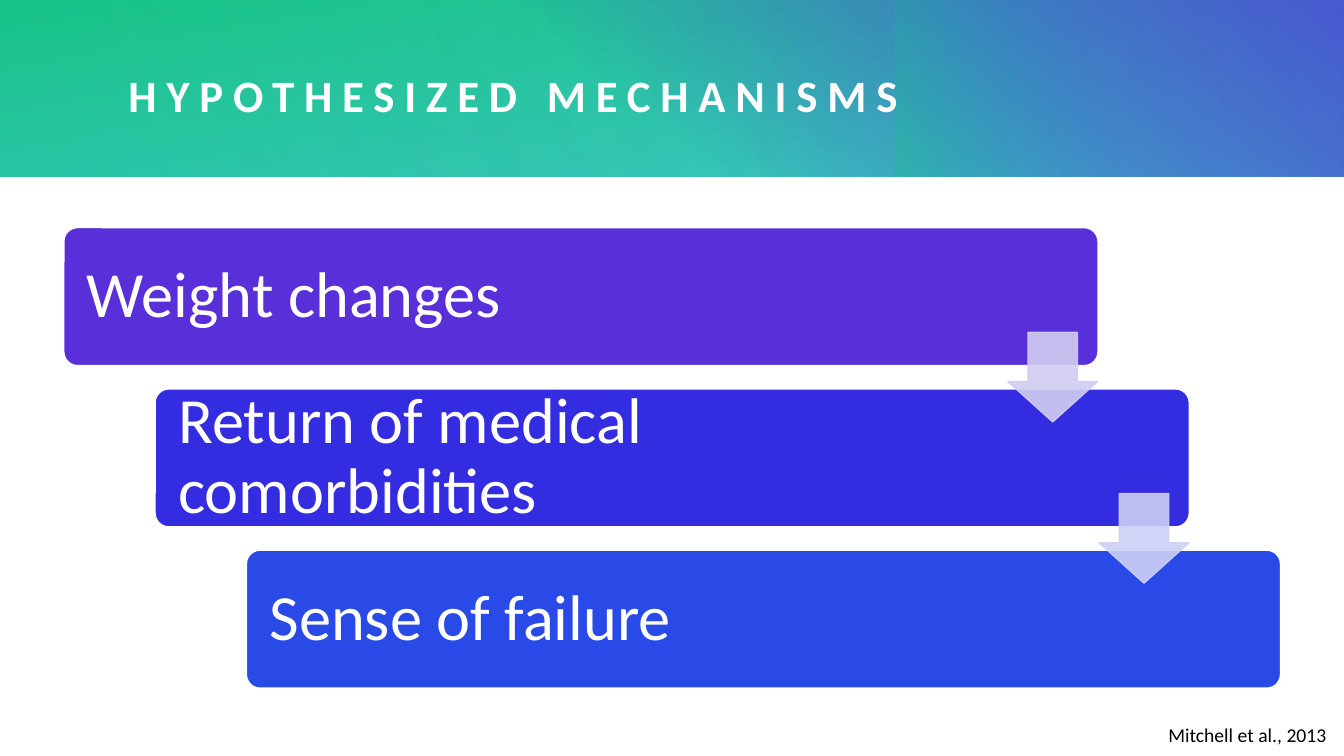
"""Build the hypothesized mechanisms slide."""
from dataclasses import dataclass

from lxml.etree import SubElement
from pptx import Presentation
from pptx.dml.color import RGBColor
from pptx.enum.shapes import MSO_SHAPE
from pptx.enum.text import MSO_ANCHOR, MSO_AUTO_SIZE, PP_ALIGN
from pptx.oxml.ns import qn
from pptx.util import Pt


@dataclass(frozen=True)
class Theme:
    font: str = "Calibri"
    white: str = "FFFFFF"
    black: str = "000000"
    teal: str = "22BFBE"
    green: str = "16C67B"
    blue: str = "1787D5"
    purple: str = "592FD9"
    indigo: str = "332CE0"
    royal: str = "294AE7"
    lilac: str = "D1CDF1"
    lavender: str = "CDD0F6"
    title_size: float = 32
    step_size: float = 46
    source_size: float = 14


def set_opacity(color_parent, percent):
    if percent < 100:
        color = next(color_parent.iter(qn("a:srgbClr")))
        SubElement(color, qn("a:alpha"), val=str(percent * 1000))


def write_text(text_frame, text, *, font, size, color, bold=False, tracking=0,
               line_spacing=1.0, margins=(0, 0, 0, 0), wrap=True):
    text_frame.auto_size = MSO_AUTO_SIZE.NONE
    text_frame.word_wrap = wrap
    text_frame.vertical_anchor = MSO_ANCHOR.MIDDLE
    (text_frame.margin_left, text_frame.margin_top,
     text_frame.margin_right, text_frame.margin_bottom) = map(Pt, margins)
    paragraph = text_frame.paragraphs[0]
    paragraph.alignment = PP_ALIGN.LEFT
    paragraph.line_spacing = line_spacing
    run = paragraph.add_run()
    run.text = text
    run.font.name = font
    run.font.size = Pt(size)
    run.font.bold = bold
    run.font.color.rgb = RGBColor.from_string(color)
    if tracking:
        run.font._element.set("spc", str(tracking * 100))


class SlideBuilder:
    """Hold the theme and the slide being filled."""

    def __init__(self, slide, theme):
        self.slide = slide
        self.theme = theme

    def add_shape(self, kind, box, adjustments=()):
        shape = self.slide.shapes.add_shape(kind, *map(Pt, box))
        shape.shadow.inherit = False
        for index, value in enumerate(adjustments):
            shape.adjustments[index] = value
        return shape

    def add_gradient(self, box, stops, angle, rotation=0):
        shape = self.add_shape(MSO_SHAPE.RECTANGLE, box)
        shape.rotation = rotation
        shape.line.fill.background()
        shape.fill.gradient()
        shape.fill.gradient_angle = 360 - angle
        for stop, (position, color, opacity) in zip(shape.fill.gradient_stops, stops):
            stop.position = position / 100
            stop.color.rgb = RGBColor.from_string(color)
            set_opacity(stop._gs, opacity)

    def add_solid(self, kind, box, adjustments, fill, line, opacity=100):
        shape = self.add_shape(kind, box, adjustments)
        shape.fill.solid()
        shape.fill.fore_color.rgb = RGBColor.from_string(fill)
        shape.line.color.rgb = RGBColor.from_string(line)
        shape.line.width = Pt(1)
        properties = shape._element.spPr
        set_opacity(properties.find(qn("a:solidFill")), opacity)
        set_opacity(properties.find(qn("a:ln")), opacity)
        return shape

    def add_title(self, text, box):
        title = self.slide.shapes.title
        title.left, title.top, title.width, title.height = map(Pt, box)
        title._element.getparent().append(title._element)
        write_text(title.text_frame, text, font=self.theme.font, size=self.theme.title_size,
                   color=self.theme.white, bold=True, tracking=7)

    def add_step(self, text, box, fill):
        step = self.add_solid(MSO_SHAPE.ROUNDED_RECTANGLE, box, [0.1], fill, self.theme.white)
        write_text(step.text_frame, text, font=self.theme.font, size=self.theme.step_size,
                   color=self.theme.white, line_spacing=0.9, margins=(13.7, 0, 143, 0))

    def add_arrow(self, box, color):
        self.add_solid(MSO_SHAPE.DOWN_ARROW, box, [0.55, 0.45], color, color, opacity=90)

    def add_source(self, text, box):
        source = self.slide.shapes.add_textbox(*map(Pt, box))
        write_text(source.text_frame, text, font=self.theme.font, size=self.theme.source_size,
                   color=self.theme.black, wrap=False)


def main():
    theme = Theme()
    presentation = Presentation()
    presentation.slide_width, presentation.slide_height = Pt(960), Pt(540)
    slide = presentation.slides.add_slide(presentation.slide_layouts[5])
    builder = SlideBuilder(slide, theme)

    banner_layers = [
        ((0, 0, 960, 126), [(0, theme.teal, 83), (100, theme.green, 100)], 260, 0),
        ((346.5, 0.5, 613.5, 125.5), [(22, theme.purple, 0), (99, theme.purple, 100)], 310, 0),
        ((710.8, -71.5, 126, 269.2), [(45, theme.blue, 0), (99, theme.green, 33)], 250, 270),
        ((193.3, 0, 766.4, 126), [(0, theme.teal, 30), (99, theme.teal, 0)], 330, 180),
        ((0, 0, 623, 126), [(0, theme.teal, 21), (99, theme.teal, 0)], 340, 0),
    ]
    for box, stops, angle, rotation in banner_layers:
        builder.add_gradient(box, stops, angle, rotation)
    builder.add_title("HYPOTHESIZED MECHANISMS", (91.7, 29.5, 817.2, 76.3))

    step_right, step_down = 65.2, 115.2
    steps = [("Weight changes", theme.purple),
             ("Return of medical comorbidities", theme.indigo),
             ("Sense of failure", theme.royal)]
    for index, (text, fill) in enumerate(steps):
        left, top = 45.6 + index * step_right, 162.6 + index * step_down
        builder.add_step(text, (left, top, 738.7, 98.6), fill)
    for index, color in enumerate([theme.lilac, theme.lavender]):
        left, top = 719.9 + index * step_right, 237.3 + index * step_down
        builder.add_arrow((left, top, 64.1, 64.1), color)

    builder.add_source("Mitchell et al., 2013", (834.5, 516, 118, 18))
    presentation.save("out.pptx")


if __name__ == "__main__":
    main()
